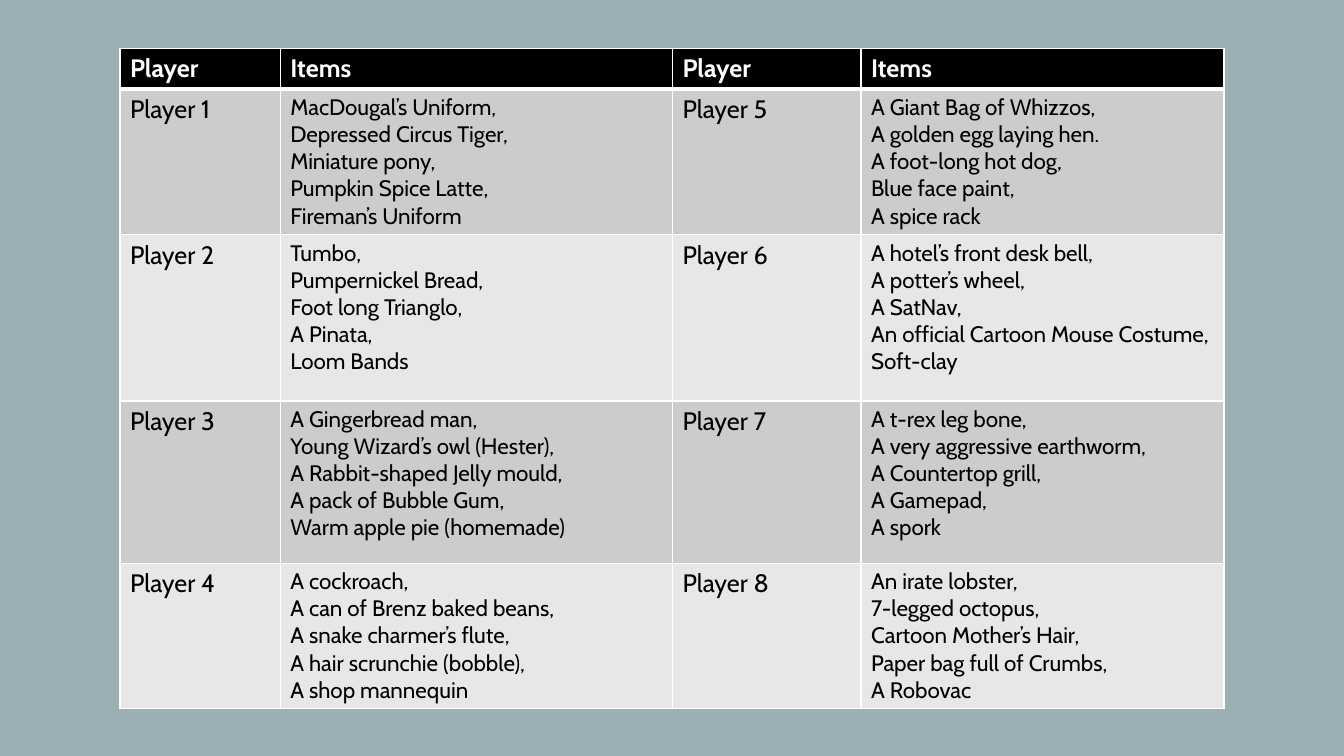
import pptx
import pptx.dml.color
import pptx.oxml
import pptx.oxml.ns
import pptx.util
from pptx.util import Inches

COLORS = {
    "background": "9BAFB5",
    "header": "000000",
    "dark_band": "CCCCCC",
    "light_band": "E7E7E7",
    "border": "FFFFFF",
    "header_text": "FFFFFF",
    "text": "000000",
}
COLUMN_WIDTHS = [1.59, 3.89, 1.87, 3.6]
ROW_HEIGHTS = [0.4, 1.44, 1.65, 1.61, 1.43]
PLAYER_ITEMS = [
    ["MacDougal’s Uniform,", "Depressed Circus Tiger,", "Miniature pony,",
     "Pumpkin Spice Latte,", "Fireman’s Uniform"],
    ["Tumbo,", "Pumpernickel Bread,", "Foot long Trianglo,", "A Pinata,",
     "Loom Bands"],
    ["A Gingerbread man,", "Young Wizard’s owl (Hester),",
     "A Rabbit-shaped Jelly mould,", "A pack of Bubble Gum,",
     "Warm apple pie (homemade)"],
    ["A cockroach,", "A can of Brenz baked beans,", "A snake charmer’s flute,",
     "A hair scrunchie (bobble),", "A shop mannequin"],
    ["A Giant Bag of Whizzos,", "A golden egg laying hen.",
     "A foot-long hot dog,", "Blue face paint,", "A spice rack"],
    ["A hotel’s front desk bell,", "A potter’s wheel,", "A SatNav,",
     "An official Cartoon Mouse Costume,", "Soft-clay"],
    ["A t-rex leg bone,", "A very aggressive earthworm,",
     "A Countertop grill,", "A Gamepad,", "A spork"],
    ["An irate lobster,", "7-legged octopus,", "Cartoon Mother’s Hair,",
     "Paper bag full of Crumbs,", "A Robovac"],
]


def rgb(name):
    return pptx.dml.color.RGBColor.from_string(COLORS[name])


def write_text(frame, lines, size=18, color="text", bold=False, font="Cabin"):
    """Fill a text frame with one paragraph per line."""
    for index, line in enumerate(lines):
        para = frame.paragraphs[0] if index == 0 else frame.add_paragraph()
        span = para.add_run()
        span.text = line
        span.font.name = font
        span.font.size = pptx.util.Pt(size)
        span.font.bold = bold
        span.font.color.rgb = rgb(color)


def set_borders(cell, color="border", **widths):
    """Draw the cell's borders; L, R, T and B override the 1 pt width."""
    properties = cell._tc.get_or_add_tcPr()
    for index, side in enumerate("LRTB"):
        width = pptx.util.Pt(widths.get(side, 1))
        line = pptx.oxml.parse_xml(
            f'<a:ln{side} {pptx.oxml.ns.nsdecls("a")} w="{width}">'
            f'<a:solidFill><a:srgbClr val="{COLORS[color]}"/></a:solidFill>'
            f'</a:ln{side}>')
        properties.insert(index, line)


class PageBuilder:
    def __init__(self, deck):
        self.page = deck.slides.add_slide(deck.slide_layouts[6])

    def background(self, color):
        fill = self.page.background.fill
        fill.solid()
        fill.fore_color.rgb = rgb(color)

    def table(self, left, top, widths, heights):
        frame = self.page.shapes.add_table(
            len(heights), len(widths), Inches(left), Inches(top),
            Inches(sum(widths)), Inches(sum(heights)))
        for column, width in zip(frame.table.columns, widths):
            column.width = Inches(width)
        for row, height in zip(frame.table.rows, heights):
            row.height = Inches(height)
        return frame.table

    def cell(self, cell, lines, fill, borders, **text_format):
        cell.fill.solid()
        cell.fill.fore_color.rgb = rgb(fill)
        set_borders(cell, **borders)
        write_text(cell.text_frame, lines, **text_format)


def main():
    deck = pptx.Presentation()
    deck.slide_width, deck.slide_height = Inches(13.33), Inches(7.5)
    builder = PageBuilder(deck)
    builder.background("background")
    table = builder.table(1.19, 0.48, COLUMN_WIDTHS, ROW_HEIGHTS)

    for column, heading in enumerate(["Player", "Items"] * 2):
        builder.cell(table.cell(0, column), [heading], "header", {"B": 3},
                     color="header_text", bold=True)

    players_per_side = len(ROW_HEIGHTS) - 1
    for index, items in enumerate(PLAYER_ITEMS):
        side, position = divmod(index, players_per_side)
        row, column = position + 1, side * 2
        band = "dark_band" if row % 2 else "light_band"
        borders = {"T": 3} if row == 1 else {}
        builder.cell(table.cell(row, column), [f"Player {index + 1}"], band,
                     borders)
        builder.cell(table.cell(row, column + 1), items, band, borders, size=16)

    deck.save("out.pptx")


if __name__ == "__main__":
    main()
